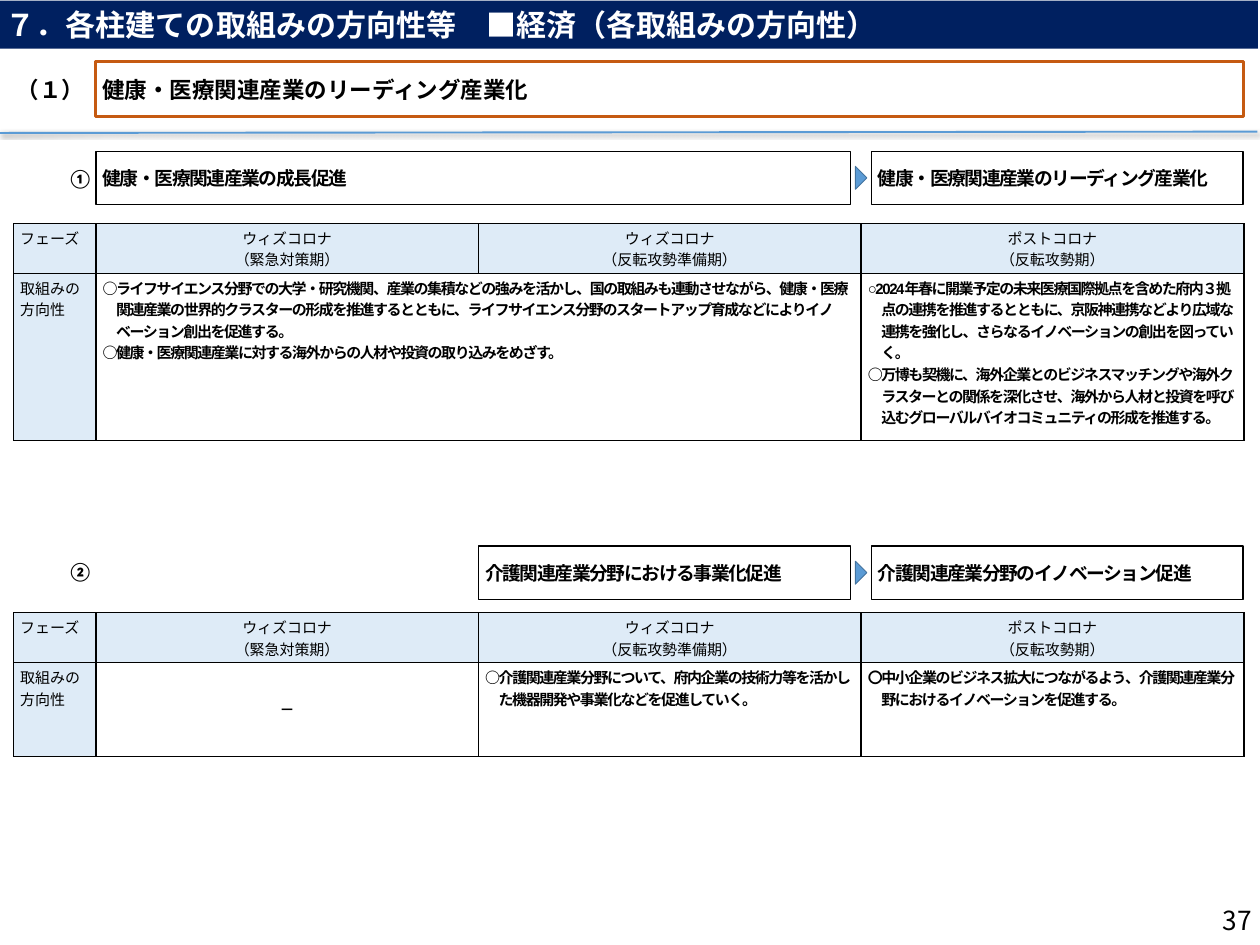
from dataclasses import dataclass

from lxml import etree
from pptx import Presentation, util as u
from pptx.dml.color import RGBColor
from pptx.enum import shapes, text
from pptx.oxml import ns

PX = 9144
BLACK = RGBColor(0, 0, 0)
WHITE = RGBColor(255, 255, 255)
NAVY = RGBColor(0x00, 0x20, 0x60)
ORANGE = RGBColor(0xC5, 0x5A, 0x11)
BLUE = RGBColor(0x5B, 0x9B, 0xD5)
DARK_BLUE = RGBColor(0x43, 0x73, 0x9E)
PALE_BLUE = RGBColor(0xDE, 0xEB, 0xF7)
CJK = "Noto Sans CJK JP"
LEFT, CENTER, RIGHT = text.PP_ALIGN.LEFT, text.PP_ALIGN.CENTER, text.PP_ALIGN.RIGHT
TOP, MIDDLE = text.MSO_ANCHOR.TOP, text.MSO_ANCHOR.MIDDLE
RECT = shapes.MSO_SHAPE.RECTANGLE
PLATE = shapes.MSO_SHAPE.PENTAGON
TRIANGLE = shapes.MSO_SHAPE.ISOSCELES_TRIANGLE
COLUMNS = (122, 567, 567, 567)
PHASES = (
    ("フェーズ",),
    ("ウィズコロナ", "（緊急対策期）"),
    ("ウィズコロナ", "（反転攻勢準備期）"),
    ("ポストコロナ", "（反転攻勢期）"),
)


@dataclass(frozen=True)
class Area:
    left: int
    top: int
    width: int
    height: int

    def emu(self) -> tuple:
        return tuple(u.Emu(v * PX) for v in (self.left, self.top, self.width, self.height))


@dataclass(frozen=True)
class Style:
    size: int
    bold: bool = True
    color: RGBColor = BLACK
    font: str = "Arial"
    align: text.PP_ALIGN = LEFT
    spacing: int = 0
    hang: int = 0


@dataclass(frozen=True)
class Panel:
    area: Area
    words: str
    style: Style
    fill: RGBColor | None = None
    line: RGBColor | None = None
    weight: float = 1.5
    kind: shapes.MSO_SHAPE = RECT


@dataclass(frozen=True)
class Label:
    area: Area
    words: str
    style: Style


@dataclass(frozen=True)
class Entry:
    column: int
    lines: tuple
    span: int = 1
    centered: bool = False


@dataclass(frozen=True)
class PhaseTable:
    top: int
    body_height: int
    entries: tuple


GOAL = Style(20, spacing=-150)
NUMBER = Style(20, font="Calibri", align=CENTER)
HEADING = Style(16, bold=False, align=CENTER)
SIDE = Style(16, bold=False)
BODY = Style(16, spacing=-150, hang=20)
DASH = Style(16, align=CENTER, spacing=-150)

PANELS = (
    Panel(Area(-1, 1, 1865, 71), "７．各柱建ての取組みの方向性等\u3000■経済（各取組みの方向性）",
          Style(32, color=WHITE), fill=NAVY),
    Panel(Area(142, 91, 1701, 82), "健康・医療関連産業のリーディング産業化", Style(24),
          line=ORANGE, weight=3, kind=PLATE),
    Panel(Area(142, 224, 1118, 79), "健康・医療関連産業の成長促進", GOAL, WHITE, BLACK),
    Panel(Area(1291, 224, 551, 79), "健康・医療関連産業のリーディング産業化", GOAL, WHITE, BLACK),
    Panel(Area(709, 809, 551, 79), "介護関連産業分野における事業化促進", GOAL, WHITE, BLACK),
    Panel(Area(1291, 809, 551, 79), "介護関連産業分野のイノベーション促進", GOAL, WHITE, BLACK),
)
LABELS = (
    Label(Area(-1, 91, 151, 83), "（１）", Style(24, font="Calibri", align=CENTER)),
    Label(Area(67, 246, 104, 35), "①", NUMBER),
    Label(Area(67, 810, 104, 72), "②", NUMBER),
    Label(Area(1771, 1325, 94, 75), "37", Style(28, bold=False, font=CJK, align=RIGHT)),
)
TABLES = (
    PhaseTable(331, 248, (
        Entry(1, (
            "○ライフサイエンス分野での大学・研究機関、産業の集積などの強みを活かし、国の取組みも連動させながら、"
            "健康・医療関連産業の世界的クラスターの形成を推進するとともに、ライフサイエンス分野の"
            "スタートアップ育成などによりイノベーション創出を促進する。",
            "○健康・医療関連産業に対する海外からの人材や投資の取り込みをめざす。"), span=2),
        Entry(3, (
            "○2024年春に開業予定の未来医療国際拠点を含めた府内３拠点の連携を推進するとともに、"
            "京阪神連携などより広域な連携を強化し、さらなるイノベーションの創出を図っていく。",
            "○万博も契機に、海外企業とのビジネスマッチングや海外クラスターとの関係を深化させ、"
            "海外から人材と投資を呼び込むグローバルバイオコミュニティの形成を推進する。")))),
    PhaseTable(908, 138, (
        Entry(1, ("－",), centered=True),
        Entry(2, ("○介護関連産業分野について、府内企業の技術力等を活かした機器開発や事業化などを促進していく。",)),
        Entry(3, ("〇中小企業のビジネス拡大につながるよう、介護関連産業分野におけるイノベーションを促進する。",)))),
)


def write(frame, lines: tuple, style: Style) -> None:
    frame.word_wrap = True
    for index, words in enumerate(lines):
        para = frame.add_paragraph() if index else frame.paragraphs[0]
        para.alignment = style.align
        if style.hang:
            props = para._p.get_or_add_pPr()
            props.set("marL", str(style.hang * PX))
            props.set("indent", str(-style.hang * PX))
        span = para.add_run()
        span.text = words
        span.font.size = u.Pt(style.size)
        span.font.bold = style.bold
        span.font.color.rgb = style.color
        span.font.name = style.font
        props = span.font._element
        props.set("lang", "ja-JP")
        if style.spacing:
            props.set("spc", str(style.spacing))
        etree.SubElement(props, ns.qn("a:ea"), typeface=CJK)


def draw_panel(page, panel: Panel) -> None:
    box = page.shapes.add_shape(panel.kind, *panel.area.emu())
    box.shadow.inherit = False
    if panel.kind == PLATE:
        box.adjustments[0] = 0
    if panel.fill is None:
        box.fill.background()
    else:
        box.fill.solid()
        box.fill.fore_color.rgb = panel.fill
    if panel.line is None:
        box.line.fill.background()
    else:
        box.line.color.rgb = panel.line
        box.line.width = u.Pt(panel.weight)
    if panel.words:
        box.text_frame.vertical_anchor = MIDDLE
        write(box.text_frame, (panel.words,), panel.style)
    if panel.kind == TRIANGLE:
        box.rotation = 90


def draw_label(page, label: Label) -> None:
    box = page.shapes.add_textbox(*label.area.emu())
    box.text_frame.vertical_anchor = MIDDLE
    write(box.text_frame, (label.words,), label.style)


def draw_divider(page) -> None:
    ends = (u.Emu(v * PX) for v in (-1, 197, 1863, 195))
    rule = page.shapes.add_connector(shapes.MSO_CONNECTOR.STRAIGHT, *ends)
    rule.line.color.rgb = BLUE
    rule.line.width = u.Pt(2)
    effects = etree.SubElement(rule._element.spPr, ns.qn("a:effectLst"))
    shadow = etree.SubElement(effects, ns.qn("a:outerShdw"), blurRad=str(u.Pt(4)),
                              dist=str(u.Pt(3)), dir="2700000", algn="tl", rotWithShape="0")
    color = etree.SubElement(shadow, ns.qn("a:srgbClr"), val=str(BLACK))
    etree.SubElement(color, ns.qn("a:alpha"), val="40000")


def add_borders(cell, first: bool) -> None:
    props = cell._tc.get_or_add_tcPr()
    weights = {"lnL": 1 if first else 2.25, "lnR": 2.25, "lnT": 1, "lnB": 1}
    for index, (side, weight) in enumerate(weights.items()):
        line = etree.Element(ns.qn("a:" + side), w=str(u.Pt(weight)))
        fill = etree.SubElement(line, ns.qn("a:solidFill"))
        etree.SubElement(fill, ns.qn("a:srgbClr"), val=str(BLACK))
        props.insert(index, line)


def draw_table(page, phase: PhaseTable) -> None:
    heights = (67, phase.body_height)
    area = Area(20, phase.top, sum(COLUMNS), sum(heights))
    grid = page.shapes.add_table(2, len(COLUMNS), *area.emu()).table
    grid.first_row = grid.horz_banding = False
    for column, width in zip(grid.columns, COLUMNS):
        column.width = u.Emu(width * PX)
    for row, height in zip(grid.rows, heights):
        row.height = u.Emu(height * PX)
    for r in range(2):
        for c in range(len(COLUMNS)):
            cell = grid.cell(r, c)
            cell.fill.solid()
            cell.fill.fore_color.rgb = WHITE if r and c else PALE_BLUE
            add_borders(cell, c == 0)
    for c, lines in enumerate(PHASES):
        cell = grid.cell(0, c)
        cell.vertical_anchor = MIDDLE if c else TOP
        write(cell.text_frame, lines, HEADING if c else SIDE)
    write(grid.cell(1, 0).text_frame, ("取組みの", "方向性"), SIDE)
    for entry in phase.entries:
        cell = grid.cell(1, entry.column)
        if entry.span > 1:
            cell.merge(grid.cell(1, entry.column + entry.span - 1))
        cell.vertical_anchor = MIDDLE if entry.centered else TOP
        write(cell.text_frame, entry.lines, DASH if entry.centered else BODY)


def main() -> None:
    """Build the economy policy slide and save it."""
    deck = Presentation()
    deck.slide_width, deck.slide_height = u.Emu(1867 * PX), u.Emu(1400 * PX)
    page = deck.slides.add_slide(deck.slide_layouts[6])
    for phase in TABLES:
        draw_table(page, phase)
    draw_divider(page)
    for panel in PANELS:
        draw_panel(page, panel)
    for top in (255, 840):
        draw_panel(page, Panel(Area(1259, top, 34, 17), "", GOAL, BLUE, DARK_BLUE, 1, TRIANGLE))
    for label in LABELS:
        draw_label(page, label)
    deck.save("out.pptx")


if __name__ == "__main__":
    main()
